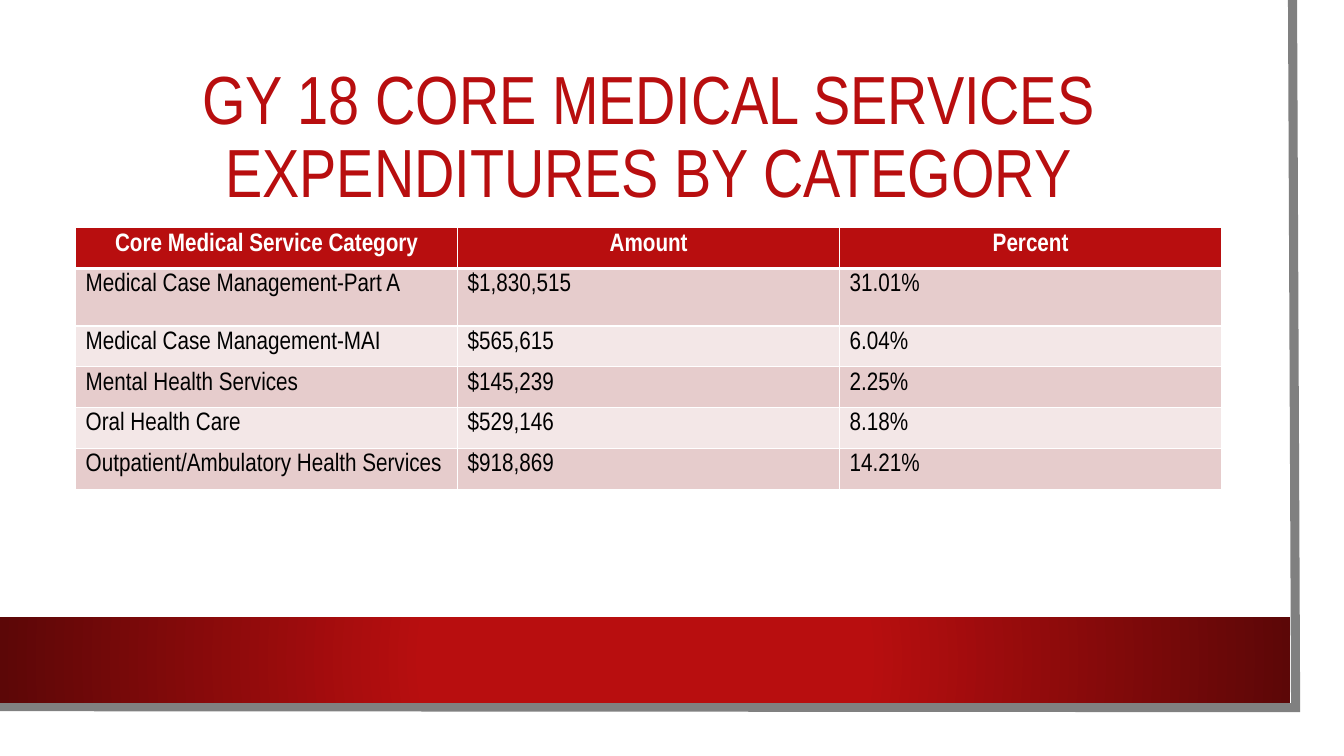
from dataclasses import dataclass

from lxml import etree
from pptx import Presentation
from pptx import util as u
from pptx.dml.color import RGBColor
from pptx.enum import shapes, text
from pptx.oxml import ns

WIDTH, HEIGHT = u.Inches(13.33), u.Inches(7.5)


@dataclass(frozen=True)
class Theme:
    font: str = "Arial Narrow"
    title_size: float = 48.6
    table_size: float = 18
    red: str = "B80E0F"
    dark_red: str = "5C0707"
    white: str = "FFFFFF"
    black: str = "000000"
    grey: str = "808080"
    row_fills: tuple[str, str] = ("E6CCCC", "F3E7E7")


@dataclass(frozen=True)
class Area:
    left: float
    top: float
    width: float
    height: float

    def box(self) -> tuple[int, int, int, int]:
        return across(self.left), down(self.top), across(self.width), down(self.height)


@dataclass(frozen=True)
class Expenditure:
    category: str
    amount: str
    percent: str
    height_share: float = 5.4

    def texts(self) -> tuple[str, str, str]:
        return self.category, self.amount, self.percent


THEME = Theme()
TITLE = "GY 18 CORE MEDICAL SERVICES EXPENDITURES BY CATEGORY"
TITLE_AREA = Area(5.63, 10, 85.27, 16.8)
TABLE_AREA = Area(5.63, 30.13, 85.27, 34.6)
BAND_AREA = Area(0, 81.65, 96.02, 11.33)
FRAME_POINTS = [(96.17, 0), (96.4, 93.6), (-0.23, 93.47)]
ROWS = [
    Expenditure("Core Medical Service Category", "Amount", "Percent"),
    Expenditure("Medical Case Management-Part A", "$1,830,515", "31.01%", 7.6),
    Expenditure("Medical Case Management-MAI", "$565,615", "6.04%"),
    Expenditure("Mental Health Services", "$145,239", "2.25%"),
    Expenditure("Oral Health Care", "$529,146", "8.18%"),
    Expenditure("Outpatient/Ambulatory Health Services", "$918,869", "14.21%"),
]


def across(percent: float) -> int:
    return round(WIDTH * percent / 100)


def down(percent: float) -> int:
    return round(HEIGHT * percent / 100)


def colour(value: str) -> RGBColor:
    return RGBColor.from_string(value)


def format_paragraph(para, size: float, value: str, bold: bool, centred: bool) -> None:
    para.alignment = text.PP_ALIGN.CENTER if centred else text.PP_ALIGN.LEFT
    for span in para.runs:
        span.font.name = THEME.font
        span.font.size = u.Pt(size)
        span.font.bold = bold
        span.font.color.rgb = colour(value)


def add_frame(page) -> None:
    points = [(across(x), down(y)) for x, y in FRAME_POINTS]
    builder = page.shapes.build_freeform(*points[0])
    builder.add_line_segments(points[1:], close=False)
    frame = builder.convert_to_shape()
    frame.shadow.inherit = False
    frame.fill.background()
    frame.line.color.rgb = colour(THEME.grey)
    frame.line.width = u.Pt(6.5)
    outline = frame.element.spPr.find(ns.qn("a:ln"))
    etree.SubElement(outline, ns.qn("a:miter"), lim="800000")


def add_band(page) -> None:
    band = page.shapes.add_shape(shapes.MSO_SHAPE.RECTANGLE, *BAND_AREA.box())
    band.shadow.inherit = False
    band.line.fill.background()
    band.fill.gradient()
    stops = zip(band.fill.gradient_stops, [(0.34, THEME.red), (1, THEME.dark_red)])
    for stop, (position, value) in stops:
        stop.position = position
        stop.color.rgb = colour(value)
    gradient = band.element.spPr.find(ns.qn("a:gradFill"))
    gradient.remove(gradient.find(ns.qn("a:lin")))
    radial = etree.Element(ns.qn("a:path"), path="circle")
    etree.SubElement(radial, ns.qn("a:fillToRect"), dict.fromkeys("ltrb", "50000"))
    gradient.find(ns.qn("a:gsLst")).addnext(radial)


def add_title(page) -> None:
    title = page.shapes.title
    title.left, title.top, title.width, title.height = TITLE_AREA.box()
    frame = title.text_frame
    frame.text = TITLE
    frame.word_wrap = True
    frame.auto_size = text.MSO_AUTO_SIZE.NONE
    frame.vertical_anchor = text.MSO_ANCHOR.MIDDLE
    para = frame.paragraphs[0]
    para.line_spacing = 0.9
    format_paragraph(para, THEME.title_size, THEME.red, False, True)


def set_borders(cell, top: float, bottom: float) -> None:
    properties = cell._tc.get_or_add_tcPr()
    widths = {"a:lnL": 1, "a:lnR": 1, "a:lnT": top, "a:lnB": bottom}
    for index, (tag, width) in enumerate(widths.items()):
        line = etree.Element(ns.qn(tag), w=str(u.Pt(width)))
        fill = etree.SubElement(line, ns.qn("a:solidFill"))
        etree.SubElement(fill, ns.qn("a:srgbClr"), val=THEME.white)
        properties.insert(index, line)


def fill_cell(cell, content: str, row: int) -> None:
    header = row == 0
    cell.text_frame.text = content
    cell.fill.solid()
    cell.fill.fore_color.rgb = colour(THEME.red if header else THEME.row_fills[(row - 1) % 2])
    value = THEME.white if header else THEME.black
    format_paragraph(cell.text_frame.paragraphs[0], THEME.table_size, value, header, header)
    set_borders(cell, 3 if row == 1 else 1, 3 if header else 1)


def add_expenditures(page) -> None:
    columns = len(ROWS[0].texts())
    table = page.shapes.add_table(len(ROWS), columns, *TABLE_AREA.box()).table
    for row, expenditure in enumerate(ROWS):
        table.rows[row].height = down(expenditure.height_share)
        for column, content in enumerate(expenditure.texts()):
            fill_cell(table.cell(row, column), content, row)


def main() -> None:
    deck = Presentation()
    deck.slide_width, deck.slide_height = WIDTH, HEIGHT
    page = deck.slides.add_slide(deck.slide_layouts.get_by_name("Title Only"))
    add_frame(page)
    add_band(page)
    add_title(page)
    add_expenditures(page)
    deck.save("out.pptx")


if __name__ == "__main__":
    main()
